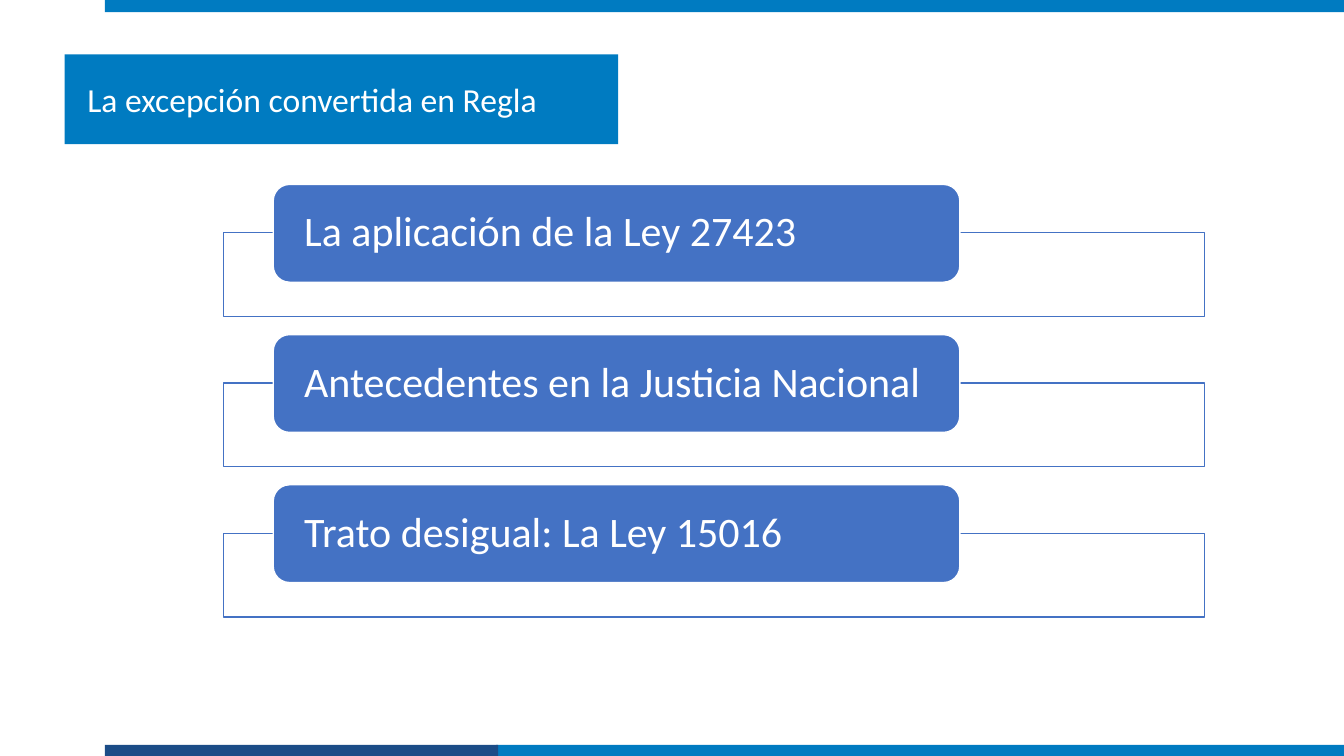
from pptx import Presentation
from pptx.dml.color import RGBColor
from pptx.enum.shapes import MSO_SHAPE
from pptx.enum.text import MSO_ANCHOR, PP_ALIGN
from pptx.util import Inches, Pt
from lxml.etree import SubElement

COLORS = {"sky": "007BC1", "navy": "1B4C87", "blue": "4472C4", "white": "FFFFFF"}
NS = "{http://schemas.openxmlformats.org/drawingml/2006/main}"


class Deck:
    def __init__(self, slide, font):
        self.slide = slide
        self.font = font

    def color(self, name):
        return RGBColor.from_string(COLORS[name])

    def box(self, kind, left, top, width, height, fill, line=None):
        shape = self.slide.shapes.add_shape(
            kind, Inches(left), Inches(top), Inches(width), Inches(height))
        shape.shadow.inherit = False
        shape.fill.solid()
        shape.fill.fore_color.rgb = self.color(fill)
        if line:
            shape.line.color.rgb = self.color(line)
            shape.line.width = Pt(1)
        else:
            shape.line.fill.background()
        return shape

    def label(self, shape, text, size, align, left, right):
        frame = shape.text_frame
        frame.text = text
        frame.word_wrap = True
        frame.vertical_anchor = MSO_ANCHOR.MIDDLE
        frame.margin_left, frame.margin_right = Inches(left), Inches(right)
        frame.margin_top = frame.margin_bottom = 0
        para = frame.paragraphs[0]
        para.alignment = align
        font = para.runs[0].font
        font.name, font.size = self.font, Pt(size)
        font.color.rgb = self.color("white")
        return para

    def title(self, text):
        shape = self.slide.shapes.title
        shape.left, shape.top = Inches(0.64), Inches(0.54)
        shape.width, shape.height = Inches(5.49), Inches(0.89)
        shape.fill.solid()
        shape.fill.fore_color.rgb = self.color("sky")
        # The wide right margin centres the text left of the middle
        self.label(shape, text, 24, PP_ALIGN.CENTER, 0.1, 0.68)

    def item(self, text, top):
        frame = self.box(MSO_SHAPE.RECTANGLE, 2.22, top + 0.48, 9.73, 0.83, "white", "blue")
        tint = frame.element.spPr.find(f"{NS}solidFill")[0]
        SubElement(tint, f"{NS}alpha", val="90000")
        plate = self.box(MSO_SHAPE.ROUNDED_RECTANGLE, 2.71, top, 6.81, 0.97, "blue", "white")
        para = self.label(plate, text, 30, PP_ALIGN.LEFT, 0.26, 0.26)
        para.line_spacing = 0.9


def main():
    prs = Presentation()
    prs.slide_width, prs.slide_height = Inches(13.33), Inches(7.5)
    deck = Deck(prs.slides.add_slide(prs.slide_layouts[5]), "Calibri")

    # Bars at the top and bottom edges
    for left, top, width, fill in [(1.04, 0, 12.29, "sky"),
                                   (4.92, 7.39, 8.43, "sky"),
                                   (1.04, 7.39, 3.9, "navy")]:
        deck.box(MSO_SHAPE.RECTANGLE, left, top, width, 0.12, fill)

    # Title band
    deck.title("La excepción convertida en Regla")

    # List of framed labels
    items = ["La aplicación de la Ley 27423",
             "Antecedentes en la Justicia Nacional",
             "Trato desigual: La Ley 15016"]
    for row, text in enumerate(items):
        deck.item(text, 1.83 + row * 1.49)

    prs.save("out.pptx")


if __name__ == "__main__":
    main()
